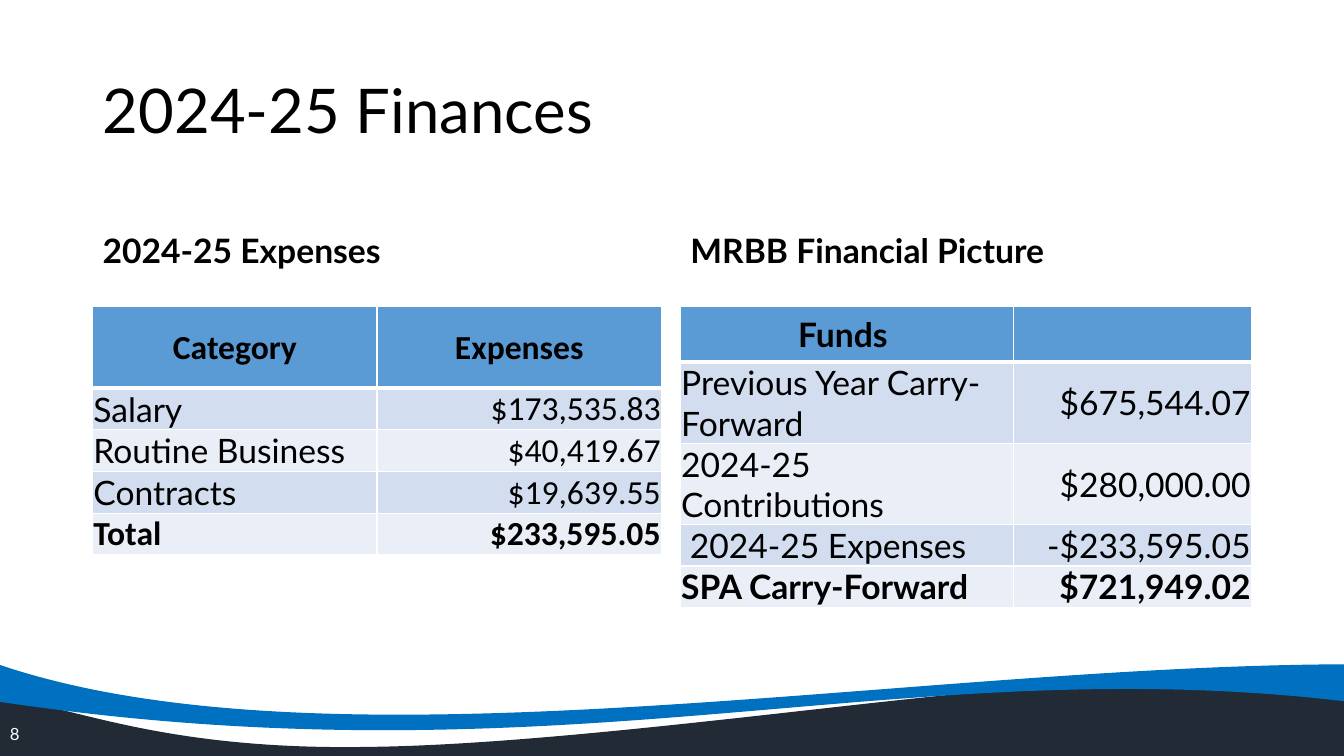
from dataclasses import dataclass

from lxml.etree import SubElement
from pptx import Presentation
from pptx.dml.color import RGBColor
from pptx.enum.text import MSO_ANCHOR, MSO_AUTO_SIZE, PP_ALIGN
from pptx.oxml import parse_xml
from pptx.oxml.ns import nsdecls, qn
from pptx.slide import Slide
from pptx.table import _Cell
from pptx.text.text import TextFrame, _Paragraph
from pptx.util import Emu, Pt

PX = 9144
CELL_INSET = Pt(0.5)

Point = tuple[int, int]
Segment = tuple[Point, ...]


@dataclass(frozen=True)
class Theme:
    text: str = "000000"
    number: str = "FFFFFF"
    border: str = "FFFFFF"
    header: str = "5B9BD5"
    odd_row: str = "D2DEEF"
    even_row: str = "EAEFF7"
    dark_wave: str = "222A35"
    blue_wave: str = "0070C0"
    font: str = "Lato"
    alt_font: str = "Calibri"
    title_size: int = 44
    body_size: int = 24
    number_size: int = 12


THEME = Theme()


@dataclass(frozen=True)
class Box:
    left: int
    top: int
    width: int
    height: int

    def emu(self) -> tuple[Emu, Emu, Emu, Emu]:
        return px(self.left), px(self.top), px(self.width), px(self.height)


@dataclass(frozen=True)
class Wave:
    color: str
    box: Box
    start: Point
    segments: tuple[Segment, ...]


@dataclass(frozen=True)
class FinancePanel:
    heading: str
    left: int
    columns: tuple[int, int]
    header_height: int
    figure_font: str
    rows: tuple[tuple[str, str], ...]


WAVES = (
    Wave(THEME.dark_wave, Box(-2, 660, 1339, 90), (-2, 695), (
        ((57, 692), (143, 745), (366, 741)),
        ((547, 739), (826, 699), (988, 685)),
        ((1150, 671), (1351, 648), (1337, 667)),
        ((1336, 695), (1336, 722), (1336, 750)),
        ((-1, 750),),
        ((-1, 732), (-2, 713), (-2, 695)),
    )),
    Wave(THEME.blue_wave, Box(-2, 659, 1339, 65), (-2, 659), (
        ((326, 771), (898, 660), (1336, 659)),
        ((1336, 696),),
        ((891, 643), (566, 781), (-2, 696)),
        ((-2, 659),),
    )),
)

PANELS = (
    FinancePanel("2024-25 Expenses", 92, (282, 282), 81, THEME.alt_font, (
        ("Category", "Expenses"),
        ("Salary", "$173,535.83"),
        ("Routine Business", "$40,419.67"),
        ("Contracts", "$19,639.55"),
        ("Total", "$233,595.05"),
    )),
    FinancePanel("MRBB Financial Picture", 675, (330, 236), 55, THEME.font, (
        ("Funds ", ""),
        ("Previous Year Carry-Forward", "$675,544.07"),
        ("2024-25 Contributions", "$280,000.00"),
        (" 2024-25 Expenses", " -$233,595.05"),
        ("SPA Carry-Forward", "$721,949.02"),
    )),
)
HEADING_TOP, HEADING_HEIGHT = 184, 90
TABLE_TOP, ROW_HEIGHT = 304, 41


def px(value: int) -> Emu:
    return Emu(value * PX)


def rgb(value: str) -> RGBColor:
    return RGBColor.from_string(value)


def add_run(p: _Paragraph, text: str, size: int, font: str = THEME.font,
            color: str = THEME.text, bold: bool = False) -> None:
    r = p.add_run()
    r.text = text
    r.font.size = Pt(size)
    r.font.name = font
    r.font.bold = bold
    r.font.color.rgb = rgb(color)


def set_frame(tf: TextFrame, anchor: MSO_ANCHOR) -> _Paragraph:
    tf.word_wrap = True
    tf.auto_size = MSO_AUTO_SIZE.NONE
    tf.vertical_anchor = anchor
    p = tf.paragraphs[0]
    p.alignment = PP_ALIGN.LEFT
    return p


def add_textbox(s: Slide, box: Box, anchor: MSO_ANCHOR) -> _Paragraph:
    return set_frame(s.shapes.add_textbox(*box.emu()).text_frame, anchor)


def add_wave(s: Slide, wave: Wave) -> None:
    builder = s.shapes.build_freeform(*wave.start, scale=PX)
    builder.add_line_segments([segment[-1] for segment in wave.segments])
    sp = builder.convert_to_shape()
    sp.left, sp.top, sp.width, sp.height = wave.box.emu()
    outline = next(sp._element.iter(qn("a:path")))
    outline.clear()
    outline.set("w", str(wave.box.width))
    outline.set("h", str(wave.box.height))
    for i, segment in enumerate(((wave.start,), *wave.segments)):
        tag = "a:moveTo" if i == 0 else "a:cubicBezTo" if len(segment) == 3 else "a:lnTo"
        command = SubElement(outline, qn(tag))
        for x, y in segment:
            SubElement(command, qn("a:pt"), x=str(x - wave.box.left),
                       y=str(y - wave.box.top))
    SubElement(outline, qn("a:close"))
    sp.shadow.inherit = False
    sp.fill.solid()
    sp.fill.fore_color.rgb = rgb(wave.color)
    sp.line.fill.background()


def set_header_borders(cell: _Cell) -> None:
    tc_pr = cell._tc.get_or_add_tcPr()
    for i, (side, width) in enumerate((("L", 1), ("R", 1), ("T", 1), ("B", 3))):
        tc_pr.insert(i, parse_xml(
            f'<a:ln{side} {nsdecls("a")} w="{Pt(width)}"><a:solidFill>'
            f'<a:srgbClr val="{THEME.border}"/></a:solidFill></a:ln{side}>'))


def add_panel(s: Slide, panel: FinancePanel) -> None:
    width = sum(panel.columns)
    p = add_textbox(s, Box(panel.left, HEADING_TOP, width, HEADING_HEIGHT),
                    MSO_ANCHOR.BOTTOM)
    p.line_spacing = 0.9
    add_run(p, panel.heading, THEME.body_size, bold=True)

    last = len(panel.rows) - 1
    box = Box(panel.left, TABLE_TOP, width, panel.header_height + last * ROW_HEIGHT)
    table = s.shapes.add_table(len(panel.rows), 2, *box.emu()).table
    for column, column_width in zip(table.columns, panel.columns):
        column.width = px(column_width)
    for i, row in enumerate(panel.rows):
        table.rows[i].height = px(ROW_HEIGHT if i else panel.header_height)
        fill = THEME.header if i == 0 else THEME.odd_row if i % 2 else THEME.even_row
        strong = i in (0, last)
        for j, text in enumerate(row):
            cell = table.cell(i, j)
            cell.fill.solid()
            cell.fill.fore_color.rgb = rgb(fill)
            cell.vertical_anchor = MSO_ANCHOR.MIDDLE
            cell.margin_left = cell.margin_top = cell.margin_right = CELL_INSET
            cell.margin_bottom = 0
            if i == 0:
                set_header_borders(cell)
            p = cell.text_frame.paragraphs[0]
            p.alignment = (PP_ALIGN.CENTER if i == 0
                           else PP_ALIGN.RIGHT if j else PP_ALIGN.LEFT)
            if text:
                font = panel.figure_font if strong or j else THEME.font
                add_run(p, text, THEME.body_size, font, bold=strong)


def main() -> None:
    prs = Presentation()
    prs.slide_width, prs.slide_height = px(1333), px(750)
    s = prs.slides.add_slide(prs.slide_layouts[5])
    for wave in WAVES:
        add_wave(s, wave)

    title = s.shapes.title
    title.left, title.top, title.width, title.height = Box(92, 40, 1150, 145).emu()
    p = set_frame(title.text_frame, MSO_ANCHOR.MIDDLE)
    p.line_spacing = 0.9
    add_run(p, "2024-25 Finances", THEME.title_size)

    for panel in PANELS:
        add_panel(s, panel)

    p = add_textbox(s, Box(0, 708, 300, 40), MSO_ANCHOR.MIDDLE)
    add_run(p, "8", THEME.number_size, color=THEME.number)
    prs.save("out.pptx")


if __name__ == "__main__":
    main()
